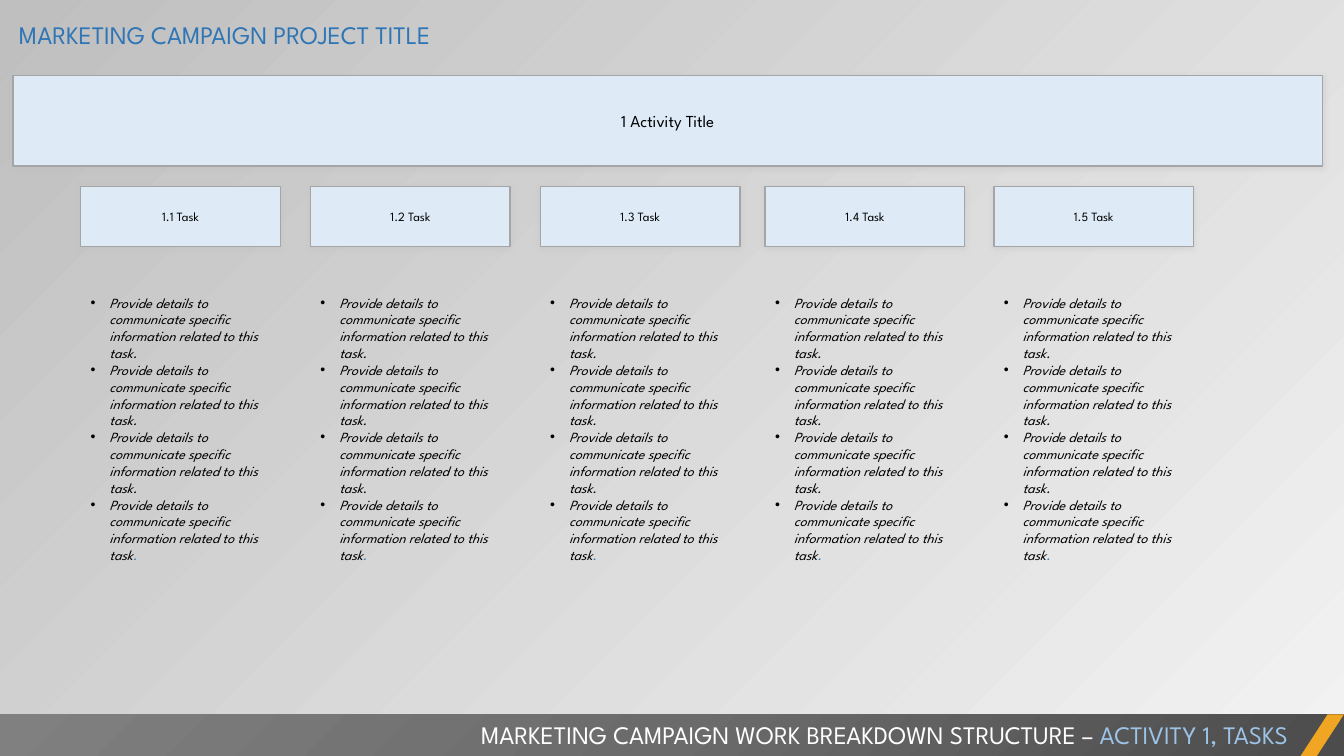
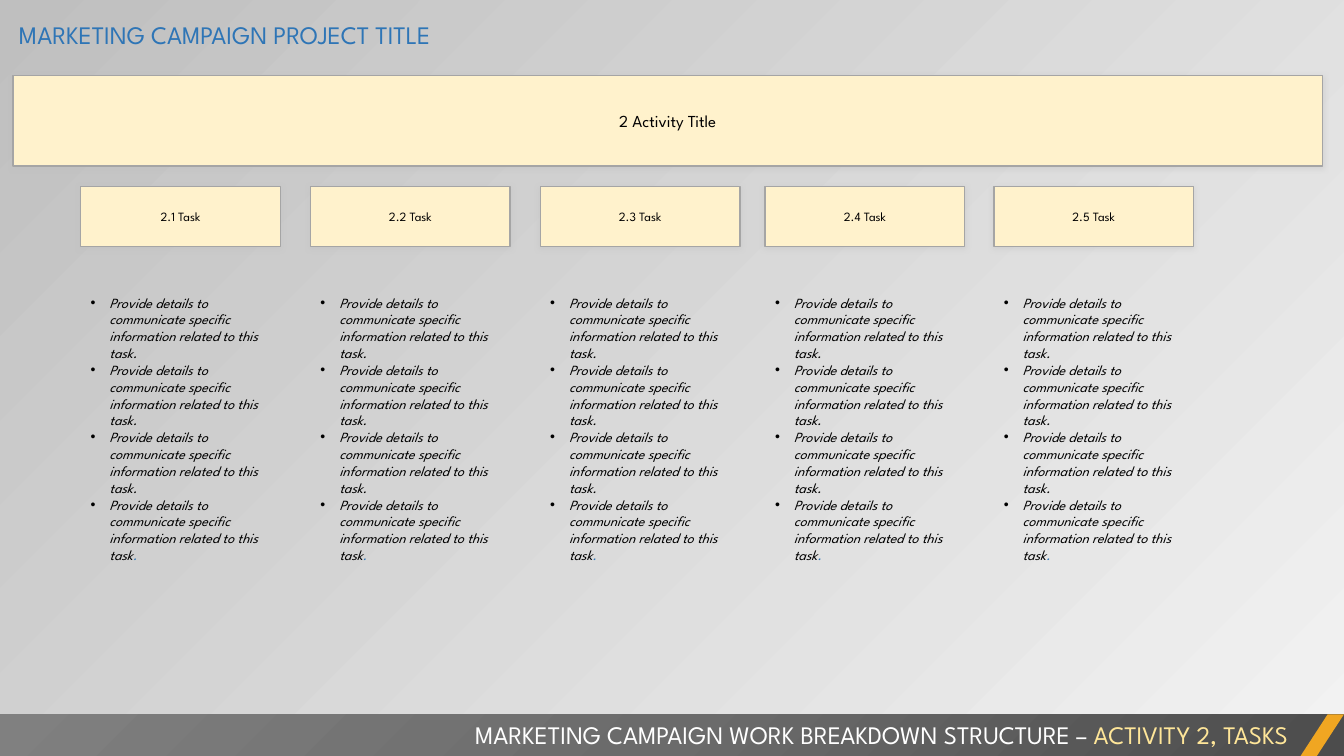
from pptx import Presentation
from pptx import util as u
from pptx.dml.color import RGBColor
from pptx.enum import shapes, text
from pptx.oxml import parse_xml
from pptx.oxml import ns

Pt = u.Pt
W, H = 960, 540
FONT = "League Spartan"
COLORS = {
    "title": "2E75B6", "text": "000000", "white": "FFFFFF",
    "border": "A5A5A5", "shadow": "BFBFBF", "corner": "F0A622",
    "blue": "DEEBF7", "blue_accent": "9DC3E6",
    "yellow": "FFF2CC", "yellow_accent": "FFE699",
}
# Gradient stops: position, colour, opacity (all in percent)
BACKGROUND = [(0, "F2F2F2", 40), (100, "BFBFBF", 100)]
FOOTER = [(0, "4C4C4C", 100), (50, "6B6B6B", 100), (100, "808080", 100)]
LINEAR = '<a:lin ang="13500000" scaled="0"/>'
RADIAL = '<a:path path="circle"><a:fillToRect l="100000" t="100000"/></a:path>'

# Task columns
COLUMNS = [57.6, 221.8, 385.9, 546.5, 709.9]
COLUMN_W = 142.6
DETAIL = "Provide details to communicate specific information related to this task"
DETAIL_COUNT = 4


def rgb(name):
    return RGBColor.from_string(COLORS[name])


def set_gradient(parent, stops, direction):
    """Swap the solid fill of parent for a gradient."""
    gs = "".join(
        f'<a:gs pos="{pos * 1000}"><a:srgbClr val="{color}">'
        f'<a:alpha val="{alpha * 1000}"/></a:srgbClr></a:gs>'
        for pos, color, alpha in stops)
    fill = parse_xml(f'<a:gradFill {ns.nsdecls("a")} rotWithShape="1">'
                     f'<a:gsLst>{gs}</a:gsLst>{direction}</a:gradFill>')
    parent.replace(parent.find(ns.qn("a:solidFill")), fill)


class Deck:
    def __init__(self):
        self.prs = Presentation()
        self.prs.slide_width, self.prs.slide_height = Pt(W), Pt(H)
        self.s = None

    def new_slide(self):
        self.s = self.prs.slides.add_slide(self.prs.slide_layouts[6])
        self.s.background.fill.solid()
        set_gradient(self.s.element.find(".//" + ns.qn("p:bgPr")), BACKGROUND, LINEAR)

    def run(self, p, words, size, color, italic=None):
        r = p.add_run()
        r.text = words
        r.font.name, r.font.size, r.font.italic = FONT, Pt(size), italic
        r.font.color.rgb = rgb(color)

    def shape(self, kind, x, y, w, h, color):
        sp = self.s.shapes.add_shape(kind, Pt(x), Pt(y), Pt(w), Pt(h))
        sp.fill.solid()
        sp.fill.fore_color.rgb = rgb(color)
        sp.line.fill.background()
        sp.shadow.inherit = False
        return sp

    def box(self, x, y, w, h, color, words, size):
        """Outlined box with a soft shadow and a centred label."""
        sp = self.shape(shapes.MSO_SHAPE.RECTANGLE, x, y, w, h, color)
        sp.line.color.rgb = rgb("border")
        sp.line.width = Pt(1)
        sp.element.spPr.find(ns.qn("a:effectLst")).append(parse_xml(
            f'<a:outerShdw {ns.nsdecls("a")} blurRad="{Pt(4)}" dist="{Pt(1)}" '
            f'dir="5400000" algn="t" rotWithShape="0">'
            f'<a:srgbClr val="{COLORS["shadow"]}"><a:alpha val="40000"/></a:srgbClr>'
            f'</a:outerShdw>'))
        tf = sp.text_frame
        tf.vertical_anchor = text.MSO_ANCHOR.MIDDLE
        p = tf.paragraphs[0]
        p.alignment = text.PP_ALIGN.CENTER
        self.run(p, words, size, "text")

    def textbox(self, x, y, w, h):
        tf = self.s.shapes.add_textbox(Pt(x), Pt(y), Pt(w), Pt(h)).text_frame
        tf.word_wrap = True
        tf.auto_size = text.MSO_AUTO_SIZE.SHAPE_TO_FIT_TEXT
        return tf

    def title(self, words):
        p = self.textbox(6.5, 10, 728, 29).paragraphs[0]
        self.run(p, words, 18, "title")

    def footer(self, words, accent_words, accent):
        band = self.shape(shapes.MSO_SHAPE.RECTANGLE, 0, 510.2, W, H - 510.2, "text")
        set_gradient(band.element.spPr, FOOTER, RADIAL)
        corner = self.shape(shapes.MSO_SHAPE.PARALLELOGRAM, 929, 510.2, 31, H - 510.2, "corner")
        corner.adjustments[0] = 0.65
        p = self.textbox(0, 510, 927, 29).paragraphs[0]
        p.alignment = text.PP_ALIGN.RIGHT
        self.run(p, words, 18, "white")
        self.run(p, accent_words, 18, accent)

    def details(self, x, y, w, h):
        """Bulleted list; only the closing full stop takes the title colour."""
        tf = self.textbox(x, y, w, h)
        for i in range(DETAIL_COUNT):
            p = tf.paragraphs[0] if i == 0 else tf.add_paragraph()
            pPr = p._p.get_or_add_pPr()
            pPr.set("marL", str(Pt(13.5)))
            pPr.set("indent", str(-Pt(13.5)))
            pPr.append(parse_xml(f'<a:buFont {ns.nsdecls("a")} typeface="Arial"/>'))
            pPr.append(parse_xml(f'<a:buChar {ns.nsdecls("a")} char="•"/>'))
            if i < DETAIL_COUNT - 1:
                self.run(p, DETAIL + ".", 10, "text", True)
            else:
                self.run(p, DETAIL, 10, "text", True)
                self.run(p, ".", 10, "title", True)

    def activity(self, number, color):
        self.new_slide()
        # Activity banner
        self.box(9.4, 54, 935.2, 64.6, color, f"{number} Activity Title", 12)
        # Footer and title
        self.footer("MARKETING CAMPAIGN WORK BREAKDOWN STRUCTURE – ",
                    f"ACTIVITY {number}, TASKS", color + "_accent")
        self.title("MARKETING CAMPAIGN PROJECT TITLE")
        # Tasks with their details
        for i, x in enumerate(COLUMNS, 1):
            self.box(x, 133.2, COLUMN_W, 43, color, f"{number}.{i} Task", 9)
            self.details(x, 206.6, COLUMN_W, 216)


def main():
    deck = Deck()
    for number, color in enumerate(("blue", "yellow"), 1):
        deck.activity(number, color)
    deck.prs.save("out.pptx")


if __name__ == "__main__":
    main()
